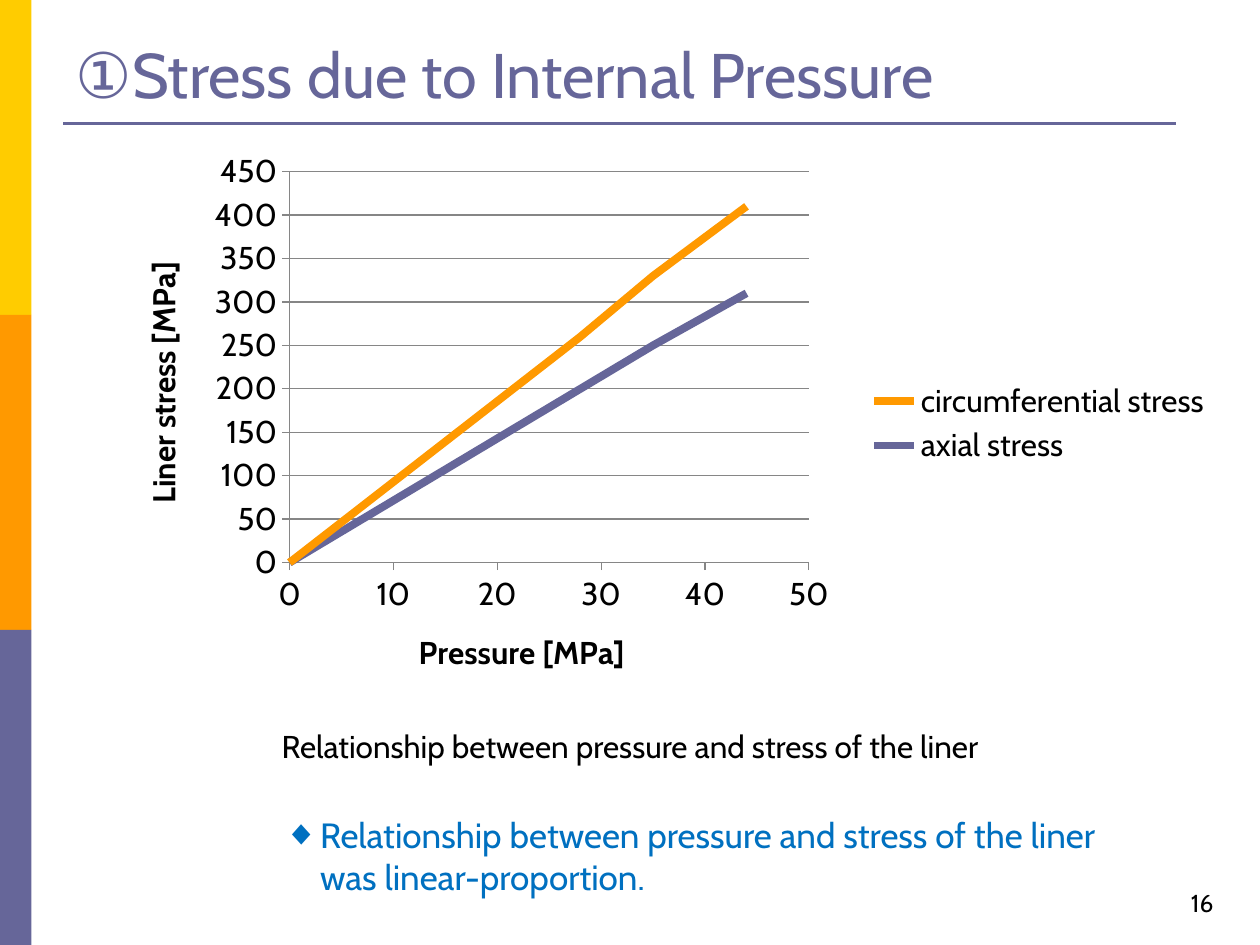
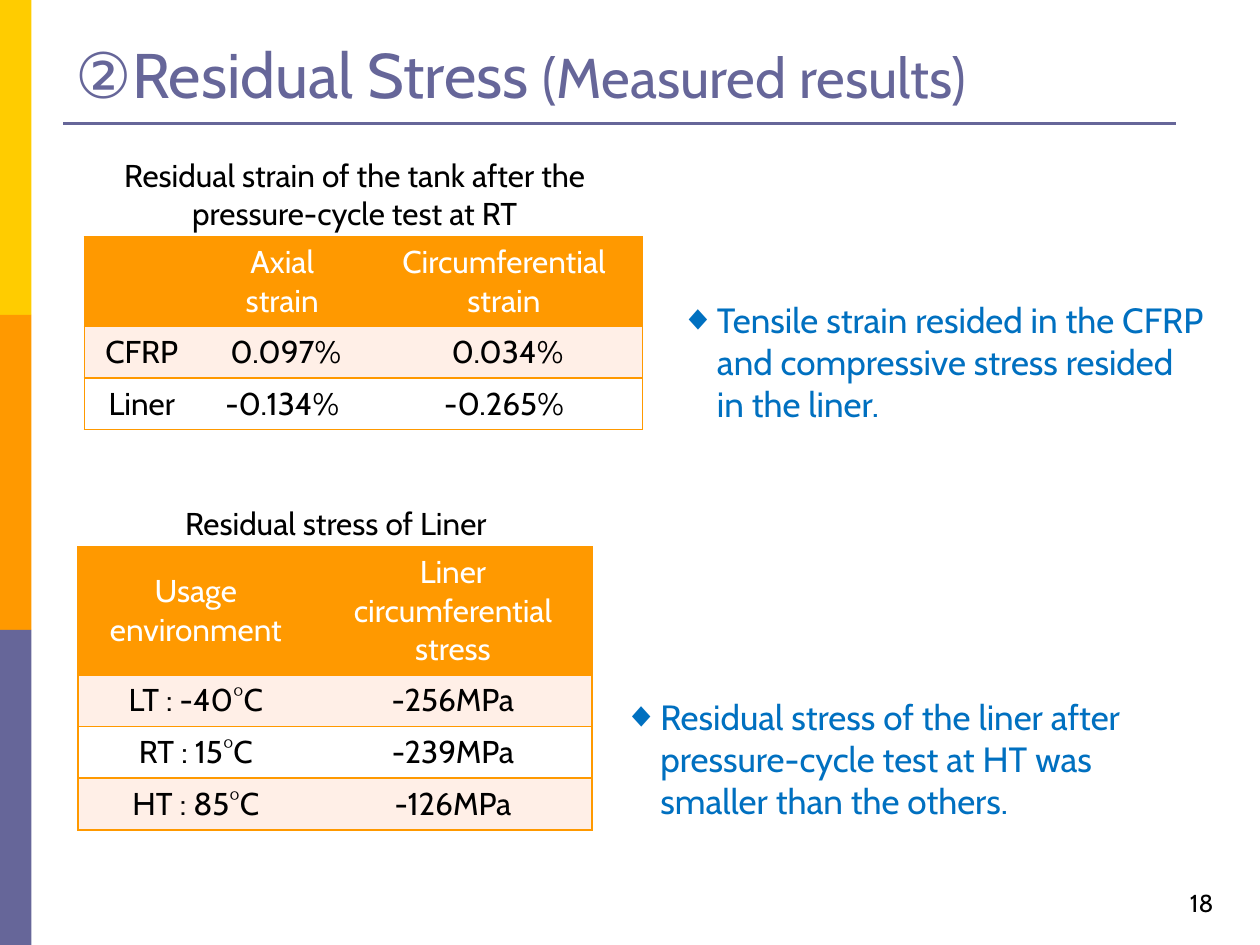
from dataclasses import dataclass

from lxml import etree
from pptx import Presentation
from pptx.chart.data import XyChartData
from pptx.dml.color import RGBColor
from pptx.enum.chart import XL_CHART_TYPE, XL_LEGEND_POSITION, XL_TICK_MARK
from pptx.enum.shapes import MSO_CONNECTOR, MSO_SHAPE
from pptx.enum.text import MSO_ANCHOR, MSO_AUTO_SIZE, PP_ALIGN
from pptx.oxml import parse_xml
from pptx.oxml.ns import nsdecls, qn
from pptx.util import Pt

SCALE = 9144
LEFT, MID, RIGHT = PP_ALIGN.LEFT, PP_ALIGN.CENTER, PP_ALIGN.RIGHT
TOP, CENTRE, BASE = MSO_ANCHOR.TOP, MSO_ANCHOR.MIDDLE, MSO_ANCHOR.BOTTOM
FIXED = MSO_AUTO_SIZE.NONE
RECT = MSO_SHAPE.RECTANGLE
STRAIGHT = MSO_CONNECTOR.STRAIGHT
SCATTER = XL_CHART_TYPE.XY_SCATTER_LINES_NO_MARKERS
LEGEND = XL_LEGEND_POSITION.RIGHT
OUTER, NONE = XL_TICK_MARK.OUTSIDE, XL_TICK_MARK.NONE


@dataclass(frozen=True)
class Theme:
    font: str = "Cabin"
    gold: str = "FFCC00"
    orange: str = "FF9900"
    slate: str = "666699"
    blue: str = "0070C0"
    black: str = "000000"
    white: str = "FFFFFF"
    tint: str = "FFEFE7"
    grey: str = "868686"
    title: int = 36
    minor: int = 32
    list: int = 20
    text: int = 18
    page: int = 14
    rule: float = 1.5
    curve: float = 4.5


def px(*sizes):
    return [size * SCALE for size in sizes]


def tone(code):
    return RGBColor.from_string(code)


class Deck:
    def __init__(self, theme):
        self.theme = theme
        self.prs = Presentation()
        self.prs.slide_width, self.prs.slide_height = px(1000, 750)
        self.slide = None

    def page(self, layout, number, title):
        t = self.theme
        self.slide = self.prs.slides.add_slide(self.prs.slide_layouts[layout])
        for row, color in enumerate((t.gold, t.orange, t.slate)):
            self.band((0, 250 * row, 25, 250), color)
        self.line((50, 98, 933, 98), t.slate)
        head = self.slide.shapes.title
        self.place(head, (50, 10, 900, 83))
        self.fill(head.text_frame, [title], t.slate, LEFT, BASE)
        self.label((894, 683, 79, 50), str(number), t.page, RIGHT, BASE)

    def place(self, shape, box):
        shape.left, shape.top, shape.width, shape.height = px(*box)

    def style(self, font, size, color, bold=False):
        font.name, font.size, font.bold = self.theme.font, Pt(size), bold
        font.color.rgb = tone(color)

    def fill(self, frame, lines, color, align, anchor):
        frame.word_wrap, frame.auto_size = True, FIXED
        frame.vertical_anchor = anchor
        self.words(frame, lines, color, align)

    def words(self, frame, lines, color, align):
        for row, runs in enumerate(lines):
            para = frame.add_paragraph() if row else frame.paragraphs[0]
            para.alignment, para.space_before = align, Pt(0)
            for text, size in runs:
                run = para.add_run()
                run.text = text
                self.style(run.font, size, color)

    def band(self, box, color):
        shape = self.slide.shapes.add_shape(RECT, *px(*box))
        shape.shadow.inherit = False
        shape.fill.solid()
        shape.fill.fore_color.rgb = tone(color)
        shape.line.fill.background()

    def line(self, ends, color):
        rule = self.slide.shapes.add_connector(STRAIGHT, *px(*ends))
        rule.line.color.rgb, rule.line.width = tone(color), Pt(self.theme.rule)
        etree.SubElement(rule._element.spPr, qn("a:effectLst"))

    def label(self, box, text, size, align=MID, anchor=TOP):
        frame = self.slide.shapes.add_textbox(*px(*box)).text_frame
        self.fill(frame, [[(text, size)]], self.theme.black, align, anchor)

    def list(self, slot, box, text):
        t = self.theme
        shape = self.slide.placeholders[slot]
        self.place(shape, box)
        frame = shape.text_frame
        props = frame.paragraphs[0]._p.get_or_add_pPr()
        indent = 29 * SCALE
        props.set("marL", str(indent))
        props.set("indent", str(-indent))
        etree.SubElement(props, qn("a:buChar")).set("char", "◆")
        self.fill(frame, [[(text, t.list)]], t.blue, LEFT, TOP)

    def edge(self, cell, side, shown):
        props = cell._tc.get_or_add_tcPr()
        line = etree.SubElement(props, qn("a:ln" + side))
        line.set("w", str(Pt(1)))
        if shown:
            paint = etree.SubElement(line, qn("a:solidFill"))
            etree.SubElement(paint, qn("a:srgbClr")).set("val", self.theme.orange)
        else:
            etree.SubElement(line, qn("a:noFill"))

    def table(self, spot, cols, head, rows):
        t = self.theme
        tall = [head] + [41] * (len(rows) - 1)
        box = px(*spot, sum(cols), sum(tall))
        grid = self.slide.shapes.add_table(len(rows), len(cols), *box).table
        grid.first_row = grid.horz_banding = False
        for col, width in zip(grid.columns, px(*cols)):
            col.width = width
        for row, height in zip(grid.rows, px(*tall)):
            row.height = height
        last = len(cols) - 1
        for r, row in enumerate(rows):
            back = t.orange if r == 0 else t.tint if r % 2 else t.white
            color = t.black if r else t.white
            for c, text in enumerate(row):
                cell = grid.cell(r, c)
                sides = {"L": c == 0, "R": c == last, "T": True, "B": True}
                for side, shown in sides.items():
                    self.edge(cell, side, shown)
                cell.fill.solid()
                cell.fill.fore_color.rgb = tone(back)
                cell.vertical_anchor = CENTRE
                if text:
                    lines = [[(part, t.text)] for part in text.split("\n")]
                    self.words(cell.text_frame, lines, color, MID)

    def axis(self, axis, title, top, step):
        t = self.theme
        axis.minimum_scale, axis.maximum_scale, axis.major_unit = 0, top, step
        axis.major_tick_mark, axis.minor_tick_mark = OUTER, NONE
        axis.format.line.color.rgb = tone(t.grey)
        axis.tick_labels.number_format = "General"
        axis.tick_labels.number_format_is_linked = False
        run = axis.axis_title.text_frame.paragraphs[0].add_run()
        run.text = title
        self.style(run.font, t.text, t.black, True)

    def chart(self, box, plot, xs, curves, across, up):
        t = self.theme
        data = XyChartData()
        for name, ys, _ in curves:
            series = data.add_series(name)
            for x, y in zip(xs, ys):
                series.add_data_point(x, y)
        chart = self.slide.shapes.add_chart(SCATTER, *px(*box), data).chart
        self.style(chart.font, t.text, t.black)
        chart.has_title = False
        chart.has_legend = True
        chart.legend.position = LEGEND
        chart.legend.include_in_layout = False
        chart.plots[0].vary_by_categories = False
        for series, (_, _, color) in zip(chart.plots[0].series, curves):
            series.smooth = False
            series.format.line.color.rgb = tone(color)
            series.format.line.width = Pt(t.curve)
        self.axis(chart.category_axis, *across)
        self.axis(chart.value_axis, *up)
        chart.category_axis.has_major_gridlines = False
        chart.value_axis.has_major_gridlines = True
        chart.value_axis.major_gridlines.format.line.color.rgb = tone(t.grey)
        self.frame(chart, plot)

    def frame(self, chart, plot):
        area = chart._chartSpace.find(".//" + qn("c:plotArea"))
        for old in area.findall(qn("c:layout")):
            area.remove(old)
        parts = "".join(f'<c:{tag} val="{size}"/>' for tag, size in zip("xywh", plot))
        area.insert(0, parse_xml(
            f'<c:layout {nsdecls("c")}><c:manualLayout><c:layoutTarget val="inner"/>'
            '<c:xMode val="edge"/><c:yMode val="edge"/>'
            f"{parts}</c:manualLayout></c:layout>"))


def main():
    t = Theme()
    deck = Deck(t)

    deck.page(1, 16, [("①Stress due to Internal Pressure", t.title)])
    deck.chart(
        (106, 114, 866, 444), (0.143, 0.05, 0.476, 0.699), (0, 28, 35, 44),
        [("circumferential stress", (0, 260, 330, 410), t.orange),
         ("axial stress", (0, 200, 250, 310), t.slate)],
        ("Pressure [MPa]", 50, 10), ("Liner stress [MPa]", 450, 50))
    deck.label((151, 572, 698, 40),
               "Relationship between pressure and stress of the liner", t.text)
    deck.list(1, (215, 641, 714, 77),
              "Relationship between pressure and stress of the liner "
              "was linear-proportion.")

    deck.page(3, 18, [("②Residual Stress ", t.title),
                      ("(Measured results)", t.minor)])
    deck.label((82, 119, 399, 71),
               "Residual strain of the tank after the pressure-cycle test at RT",
               t.text)
    deck.table((67, 188), (91, 132, 220), 71, [
        ("", "Axial\nstrain", "Circumferential\nstrain"),
        ("CFRP", " 0.097%", " 0.034%"),
        ("Liner", "-0.134%", "-0.265%")])
    deck.list(1, (530, 232, 438, 111),
              "Tensile strain resided in the CFRP and compressive stress "
              "resided in the liner.")
    deck.label((62, 395, 409, 40), "Residual stress of Liner", t.text)
    deck.table((62, 434), (187, 221), 101, [
        ("Usage\nenvironment", "Liner\ncircumferential\nstress"),
        ("LT : -40°C", "-256MPa"),
        ("RT : 15°C", "-239MPa"),
        ("HT : 85°C", "-126MPa")])
    deck.list(2, (485, 547, 468, 111),
              "Residual stress of the liner after pressure-cycle test at HT "
              "was smaller than the others.")

    deck.prs.save("out.pptx")


if __name__ == "__main__":
    main()
